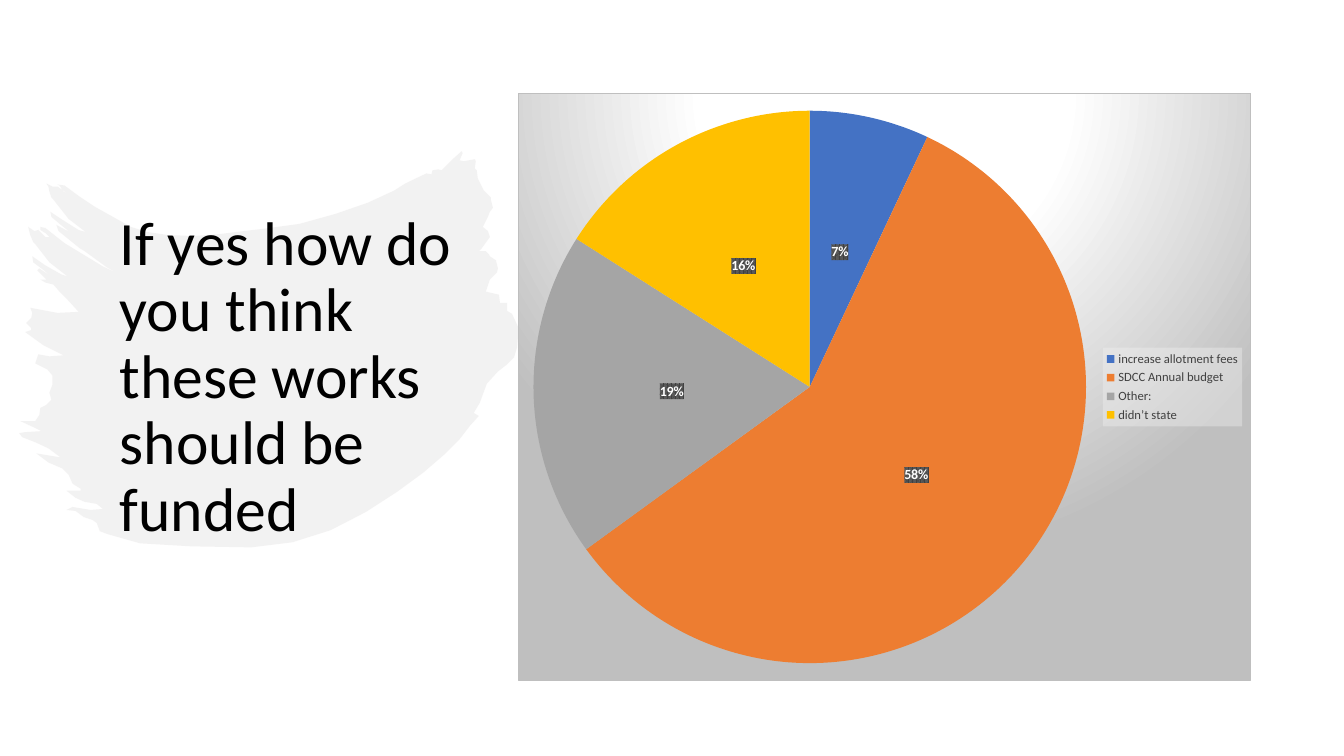
from dataclasses import dataclass

from lxml import etree
from pptx import Presentation
from pptx.chart.data import CategoryChartData
from pptx.dml.color import RGBColor as Rgb
from pptx.enum.chart import XL_CHART_TYPE as Kind, XL_LABEL_POSITION as Spot, XL_LEGEND_POSITION as Side
from pptx.enum.text import MSO_ANCHOR as Anchor
from pptx.oxml import parse_xml
from pptx.oxml.ns import nsdecls, qn
from pptx.util import Pt


@dataclass(frozen=True)
class Theme:
    """Colours and type sizes of the slide."""
    font: str = "Calibri"
    ink: str = "000000"
    brush: str = "E7E6E6"
    white: str = "FFFFFF"
    edge: str = "BFBFBF"
    key: str = "404040"
    key_back: str = "F2F2F2"
    tag_dark: str = "404040"
    tag_light: str = "595959"
    slices: tuple = ("4472C4", "ED7D31", "A5A5A5", "FFC000")
    title: int = 44
    label: int = 10
    legend: int = 9


THEME = Theme()
SHARES = {"increase allotment fees": 7, "SDCC Annual budget": 58, "Other:": 19, "didn’t state": 16}
RIGHT = (
    (458, 150), (459, 152), (456, 159), (460, 160), (471, 158), (472, 160), (471, 167), (473, 169),
    (474, 177), (480, 189), (487, 196), (487, 198), (489, 206), (486, 210), (484, 215), (480, 223),
    (479, 225), (484, 229), (486, 235), (478, 246), (475, 249), (482, 249), (485, 252), (486, 254),
    (492, 258), (494, 266), (493, 270), (486, 277), (482, 289), (495, 292), (496, 300), (503, 300),
    (503, 308), (508, 311), (514, 324), (514, 332), (513, 344), (510, 354), (503, 361), (494, 368),
    (483, 380), (476, 399), (470, 409), (475, 412), (466, 422), (456, 435), (441, 450), (420, 468))
BASE = (
    (394, 487), (363, 507), (328, 525), (290, 537), (249, 542), (190, 541), (139, 538), (107, 529),
    (99, 526), (96, 518), (92, 515), (83, 512), (75, 506), (66, 505), (72, 502), (90, 505),
    (102, 504), (96, 499), (84, 497), (75, 493), (66, 486), (80, 486), (80, 484), (72, 479),
    (68, 470), (62, 464), (48, 458), (36, 449), (60, 453), (48, 444), (35, 438), (22, 433))
LEFT = (
    (19, 429), (25, 428), (41, 427), (33, 423), (20, 417), (35, 417), (39, 411), (40, 404),
    (46, 401), (51, 396), (49, 389), (52, 381), (52, 372), (47, 366), (35, 360), (38, 351),
    (49, 353), (63, 352), (43, 342), (25, 329), (31, 327), (31, 325), (26, 320), (31, 315),
    (32, 310), (30, 305), (57, 310), (78, 309), (67, 297), (63, 293), (59, 289), (53, 282),
    (45, 280), (40, 277), (46, 277), (37, 268), (39, 266), (51, 274), (41, 266), (33, 260),
    (32, 254), (45, 263), (61, 272), (67, 274), (49, 260), (35, 242), (33, 240), (30, 233))
TOP = (
    (28, 225), (34, 229), (38, 228), (45, 235), (49, 235), (45, 231), (40, 228), (40, 225),
    (45, 226), (64, 241), (102, 264), (117, 271), (106, 265), (84, 249), (79, 246), (58, 229),
    (56, 223), (69, 230), (58, 221), (51, 215), (50, 210), (62, 218), (78, 228), (85, 230),
    (68, 217), (53, 198), (51, 196), (49, 190), (48, 185), (46, 182), (52, 185), (57, 185),
    (67, 192), (63, 190), (59, 184), (57, 183), (64, 184), (79, 195), (94, 205), (130, 225),
    (146, 230), (167, 233), (192, 234), (218, 232), (251, 228), (260, 227), (297, 222), (333, 212),
    (365, 201), (391, 189), (402, 182), (423, 172), (428, 173), (429, 169), (435, 168), (438, 169),
    (449, 158))


def paint(fill, tone):
    """Make a fill solid in one colour."""
    fill.solid()
    fill.fore_color.rgb = Rgb.from_string(tone)


def style(font, size, tone, bold=False):
    """Set face, size, colour and weight of a font."""
    font.name, font.size, font.bold = THEME.font, Pt(size), bold
    font.color.rgb = Rgb.from_string(tone)


def tint(tone, alpha=100):
    """Give the markup of a colour."""
    return f'<a:srgbClr val="{tone}"><a:alpha val="{alpha * 1000}"/></a:srgbClr>'


def props(inner):
    """Give a chart shape property element."""
    return parse_xml(f'<c:spPr {nsdecls("c", "a")}>{inner}</c:spPr>')


def stroke(slide, x, y, wide, high):
    """Draw the brush mark stretched over its box."""
    dots = RIGHT + BASE + LEFT + TOP
    xs, ys = zip(*dots)
    left, top = min(xs), min(ys)
    scale = Pt(wide) / (max(xs) - left), Pt(high) / (max(ys) - top)
    dots = [(a - left, b - top) for a, b in dots]
    pen = slide.shapes.build_freeform(*dots[0], scale=scale)
    pen.add_line_segments(dots[1:], close=True)
    mark = pen.convert_to_shape(Pt(x), Pt(y))
    mark.shadow.inherit = False
    mark.line.fill.background()
    paint(mark.fill, THEME.brush)
    tone = mark._element.spPr.find(".//" + qn("a:srgbClr"))
    etree.SubElement(tone, qn("a:alpha")).set("val", "50000")


def title(slide, x, y, wide, high):
    """Write the question in the middle of its box."""
    frame = slide.shapes.add_textbox(Pt(x), Pt(y), Pt(wide), Pt(high)).text_frame
    frame.word_wrap = True
    frame.vertical_anchor = Anchor.MIDDLE
    para = frame.paragraphs[0]
    para.text = "If yes how do you think these works should be funded"
    para.line_spacing = 0.9
    style(para.font, THEME.title, THEME.ink)


def pie(slide, x, y, wide, high):
    """Chart the shares with labels and a legend."""
    data = CategoryChartData()
    data.categories = list(SHARES)
    data.add_series("Series 1", list(SHARES.values()))
    chart = slide.shapes.add_chart(Kind.PIE, Pt(x), Pt(y), Pt(wide), Pt(high), data).chart
    chart.has_title = False
    style(chart.font, THEME.label, THEME.ink)
    plot = chart.plots[0]
    plot.vary_by_categories = True
    series = plot.series[0]
    for spot, tone in enumerate(THEME.slices):
        paint(series.points[spot].format.fill, tone)
    tags(series.data_labels)
    legend(chart)
    backdrop(chart)
    place(chart, 0.02, 0.03, 0.756, 0.94)


def tags(labels):
    """Show white percentages on dark patches."""
    labels.show_percentage, labels.show_value = True, False
    labels.number_format, labels.number_format_is_linked = "0%", False
    labels.position = Spot.CENTER
    style(labels.font, THEME.label, THEME.white, True)
    labels._element.find(qn("c:txPr")).addprevious(props(
        f'<a:pattFill prst="pct75"><a:fgClr>{tint(THEME.tag_dark)}</a:fgClr>'
        f'<a:bgClr>{tint(THEME.tag_light)}</a:bgClr></a:pattFill><a:ln><a:noFill/></a:ln>'))


def legend(chart):
    """Put the pale legend on the right."""
    chart.has_legend = True
    key = chart.legend
    key.position, key.include_in_layout = Side.RIGHT, False
    style(key.font, THEME.legend, THEME.key)
    key._element.find(qn("c:txPr")).addprevious(props(
        f'<a:solidFill>{tint(THEME.key_back, 39)}</a:solidFill><a:ln><a:noFill/></a:ln>'))


def backdrop(chart):
    """Fill the chart area with a round gradient and thin edge."""
    stops = "".join(f'<a:gs pos="{at * 1000}">{tint(tone)}</a:gs>' for at, tone in
                    ((0, THEME.white), (39, THEME.white), (100, THEME.edge)))
    chart._chartSpace.find(qn("c:txPr")).addprevious(props(
        f'<a:gradFill><a:gsLst>{stops}</a:gsLst><a:path path="circle">'
        '<a:fillToRect l="50000" t="-80000" r="50000" b="180000"/></a:path></a:gradFill>'
        f'<a:ln w="{Pt(0.75)}"><a:solidFill>{tint(THEME.edge)}</a:solidFill></a:ln>'))


def place(chart, x, y, wide, high):
    """Fix the plot as shares of the chart area."""
    area = chart._chartSpace.chart.plotArea
    for old in area.findall(qn("c:layout")):
        area.remove(old)
    sizes = "".join(f'<c:{tag} val="{val}"/>' for tag, val in
                    zip(("x", "y", "w", "h"), (x, y, wide, high)))
    area.insert(0, parse_xml(
        f'<c:layout {nsdecls("c")}><c:manualLayout><c:layoutTarget val="inner"/>'
        f'<c:xMode val="edge"/><c:yMode val="edge"/>{sizes}</c:manualLayout></c:layout>'))


def main():
    """Build the slide and save it."""
    deck = Presentation()
    deck.slide_width, deck.slide_height = Pt(960), Pt(540)
    slide = deck.slides.add_slide(deck.slide_layouts[6])
    stroke(slide, 13.7, 108, 356.4, 283)
    title(slide, 78.5, 54, 275, 432.7)
    pie(slide, 370, 66.2, 523.5, 420.5)
    deck.save("out.pptx")


if __name__ == "__main__":
    main()
